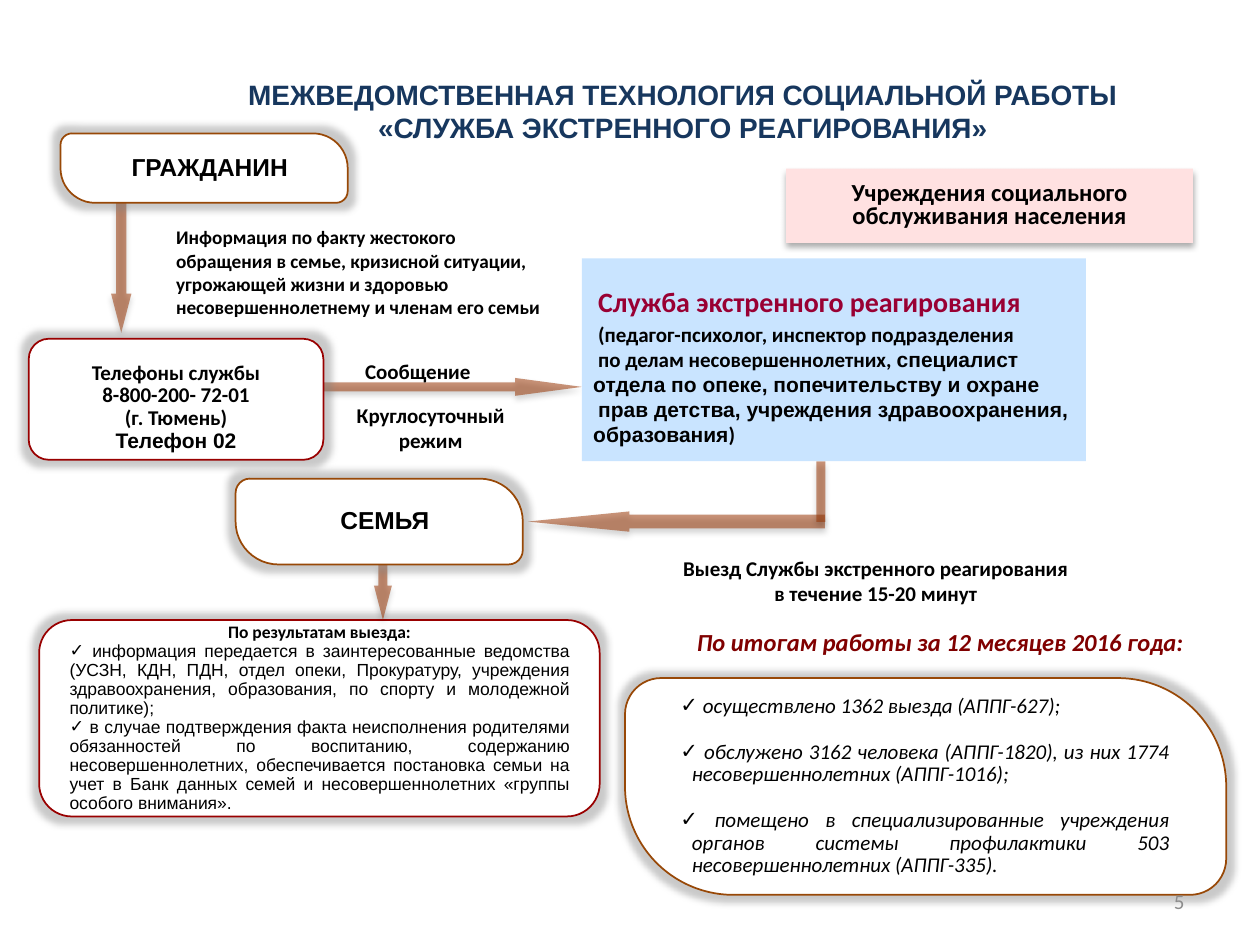
from dataclasses import dataclass
from typing import Optional

from lxml import etree
from pptx import Presentation
from pptx import util as u
from pptx.dml import color
from pptx.enum import shapes, text
from pptx.oxml import ns

GEO = shapes.MSO_SHAPE
ALIGN = text.PP_ALIGN
ANCHOR = text.MSO_ANCHOR
LEFT, CENTER, RIGHT, JUSTIFY = ALIGN.LEFT, ALIGN.CENTER, ALIGN.RIGHT, ALIGN.JUSTIFY
BROWN, DARK_RED, ARROW = "984807", "990000", "993300"
SIDE, EDGE = 0.25, 0.13


@dataclass
class Run:
    text: str
    size: float = 12
    font: str = "Calibri"
    color: str = "000000"
    bold: bool = True
    italic: bool = False


@dataclass
class Para:
    runs: list[Run]
    align: ALIGN = CENTER
    line: float = 1
    before: float = 0
    margin: float = 0
    hang: float = 0
    bullet: bool = False


@dataclass
class Box:
    at: tuple[float, float, float, float]
    paras: list[Para]
    anchor: ANCHOR = ANCHOR.MIDDLE
    insets: tuple[float, float, float, float] = (SIDE, EDGE, SIDE, EDGE)
    geometry: Optional[GEO] = None
    fill: Optional[str] = None
    outline: Optional[str] = None
    shadow: bool = False


@dataclass
class Arrow:
    at: tuple[float, float, float, float]
    geometry: GEO
    adjustments: tuple[float, ...] = ()


def rgb(value: str) -> color.RGBColor:
    return color.RGBColor.from_string(value)


def add_xml(parent, tag: str, **attrs):
    return etree.SubElement(parent, ns.qn(tag), **attrs)


def place(s, at) -> None:
    s.left, s.top, s.width, s.height = (u.Cm(v) for v in at)


def add_effect(s, tag: str, hex_color: str, alpha: int, **attrs) -> None:
    s.shadow.inherit = False
    effects = s._element.spPr.find(ns.qn("a:effectLst"))
    tone = add_xml(add_xml(effects, tag, **attrs), "a:srgbClr", val=hex_color)
    add_xml(tone, "a:alpha", val=str(alpha * 1000))


def add_shadow(s) -> None:
    add_effect(s, "a:outerShdw", "000000", 32, blurRad="44450", dist="27940",
               dir="5400000", rotWithShape="0")


def write(tf, paras: list[Para]) -> None:
    for i, para in enumerate(paras):
        p = tf.paragraphs[0] if i == 0 else tf.add_paragraph()
        pPr = p._p.get_or_add_pPr()
        pPr.set("marL", str(u.Cm(para.margin)))
        pPr.set("indent", str(-u.Cm(para.hang)))
        if para.bullet:
            add_xml(pPr, "a:buChar", char="✓")
        else:
            add_xml(pPr, "a:buNone")
        p.alignment = para.align
        p.line_spacing = para.line
        p.space_before = u.Pt(para.before)
        for run in para.runs:
            r = p.add_run()
            r.text = run.text
            r.font.size = u.Pt(run.size)
            r.font.name = run.font
            r.font.bold = run.bold
            r.font.italic = run.italic
            r.font.color.rgb = rgb(run.color)


def dress(s, box: Box) -> None:
    if box.fill:
        s.fill.solid()
        s.fill.fore_color.rgb = rgb(box.fill)
    if box.outline:
        s.line.color.rgb = rgb(box.outline)
        s.line.width = u.Pt(1)
        add_effect(s, "a:glow", "808080", 42, rad="101600")
    elif box.geometry:
        s.line.fill.background()
        s.shadow.inherit = False
    if box.shadow:
        add_shadow(s)
    tf = s.text_frame
    tf.word_wrap = True
    tf.auto_size = text.MSO_AUTO_SIZE.NONE
    tf.vertical_anchor = box.anchor
    tf.margin_left, tf.margin_top, tf.margin_right, tf.margin_bottom = (
        u.Cm(v) for v in box.insets)
    write(tf, box.paras)


def draw_box(slide, box: Box) -> None:
    at = [u.Cm(v) for v in box.at]
    if box.geometry is None:
        s = slide.shapes.add_textbox(*at)
    else:
        s = slide.shapes.add_shape(box.geometry, *at)
        if box.geometry == GEO.ROUND_2_DIAG_RECTANGLE:
            s.adjustments[0], s.adjustments[1] = 0.167, 0.5
    dress(s, box)


def fill_placeholder(s, box: Box, preset: str = "rect", **guides: int) -> None:
    place(s, box.at)
    geometry = add_xml(s._element.spPr, "a:prstGeom", prst=preset)
    values = add_xml(geometry, "a:avLst")
    for name, value in guides.items():
        add_xml(values, "a:gd", name=name, fmla=f"val {value}")
    dress(s, box)


def draw_arrow(slide, arrow: Arrow) -> None:
    s = slide.shapes.add_shape(arrow.geometry, *(u.Cm(v) for v in arrow.at))
    for i, value in enumerate(arrow.adjustments):
        s.adjustments[i] = value
    s.fill.solid()
    s.fill.fore_color.rgb = rgb(ARROW)
    tone = s._element.spPr.find(ns.qn("a:solidFill"))[0]
    add_xml(tone, "a:alpha", val="52000")
    s.line.fill.background()
    add_shadow(s)


def lines(*texts: str, size: float = 12, **layout) -> list[Para]:
    return [Para([Run(t, size)], **layout) for t in texts]


def person(at, label: str) -> Box:
    return Box(at, [Para([Run(label, 14, "Arial")], line=0.9, margin=0.23)],
               geometry=GEO.ROUND_2_DIAG_RECTANGLE, fill="FFFFFF", outline=BROWN)


def outcome(t: str) -> Para:
    return Para([Run(t, 10, "Arial", bold=False)], JUSTIFY, 0.9, bullet=True)


def total(t: str, before: float = 13) -> Para:
    return Para([Run(t, bold=False, italic=True)], JUSTIFY, 0.9, before, 0.46, 0.23, True)


TITLE = Box((3.15, 1.42, 21.23, 1.63), [
    Para([Run(t, 16, "Arial", "17375E")])
    for t in ("МЕЖВЕДОМСТВЕННАЯ ТЕХНОЛОГИЯ СОЦИАЛЬНОЙ РАБОТЫ",
              "«СЛУЖБА ЭКСТРЕННОГО РЕАГИРОВАНИЯ»")])
OUTCOMES = Box((0.79, 12.5, 11.3, 3.96), [
    Para([Run("По результатам выезда:", 10)], line=0.9),
    outcome(" информация передается в заинтересованные ведомства (УСЗН, КДН, ПДН, отдел опеки, Прокуратуру, учреждения здравоохранения, образования, по спорту и молодежной политике);"),
    outcome(" в случае подтверждения факта неисполнения родителями обязанностей по воспитанию, содержанию несовершеннолетних, обеспечивается постановка семьи на учет в Банк данных семей и несовершеннолетних «группы особого внимания»."),
], insets=(0.42, 0, 0.42, 0), fill="FFFFFF", outline=DARK_RED)
TOTALS = Box((12.6, 13.67, 12.12, 4.37), [
    total(" осуществлено 1362 выезда (АППГ-627);", 0),
    total(" обслужено 3162 человека (АППГ-1820), из них 1774 несовершеннолетних (АППГ-1016);"),
    total(" помещено в специализированные учреждения органов системы профилактики 503 несовершеннолетних (АППГ-335)."),
], insets=(0.25, 0, 0.5, 0), fill="FFFFFF", outline=BROWN)

BOXES = [
    Box((11.73, 5.21, 10.16, 4.09), [
        Para([Run("Служба экстренного реагирования", 16, color="990033")], LEFT, margin=0.1),
        Para([Run("(педагог-психолог, инспектор подразделения")], LEFT, before=1.5, margin=0.1),
        Para([Run("по делам несовершеннолетних, "), Run("специалист", font="Arial")], LEFT, margin=0.1),
        Para([Run("отдела по опеке, попечительству и охране", font="Arial")], LEFT),
        Para([Run("прав детства, учреждения здравоохранения,", font="Arial")], LEFT, margin=0.1),
        Para([Run("образования", font="Arial"), Run(")")], LEFT),
    ], insets=(0.23, 0.25, 0, 0), geometry=GEO.RECTANGLE, fill="C9E4FF"),
    Box((7.11, 7.09, 3.45, 0.76), lines("Сообщение", align=LEFT), ANCHOR.TOP),
    Box((6.5, 7.98, 4.37, 1.27), lines("Круглосуточный", "режим"), ANCHOR.TOP),
    Box((12.7, 10.72, 9.91, 1.98),
        lines("Выезд Службы экстренного реагирования", "в течение 15-20 минут")),
    Box((3.3, 4.42, 8, 2.62), lines(
        "Информация по факту жестокого обращения в семье, кризисной ситуации, угрожающей жизни и здоровью несовершеннолетнему и членам его семьи",
        size=11, align=LEFT), ANCHOR.TOP),
    Box((15.85, 3.4, 8.2, 1.5),
        lines("Учреждения социального", "обслуживания населения", size=14, line=0.8),
        geometry=GEO.RECTANGLE, fill="FFE1E1", shadow=True),
    person((1.22, 2.69, 5.79, 1.4), "ГРАЖДАНИН"),
    person((4.75, 9.65, 5.79, 1.73), "СЕМЬЯ"),
    Box((0.58, 6.83, 5.94, 2.44),
        lines("Телефоны службы", "8-800-200- 72-01", "(г. Тюмень)", line=0.9)
        + [Para([Run("Телефон 02", font="Arial")], line=0.9)],
        insets=(SIDE, 0.33, SIDE, 0), geometry=GEO.ROUNDED_RECTANGLE,
        fill="FFFFFF", outline=DARK_RED),
    Box((12.9, 12.5, 12.12, 0.86), [
        Para([Run("По итогам работы за 12 месяцев 2016 года:", 14, color="800000", italic=True)])]),
    Box((18.21, 17.65, 5.92, 1.02), [Para([Run("5", color="8C8C8C", bold=False)], RIGHT)]),
]
ARROWS = [
    Arrow((6.5, 7.62, 5.23, 0.36), GEO.RIGHT_ARROW, (0.5, 3.73)),
    Arrow((10.64, 10.31, 5.99, 0.41), GEO.LEFT_ARROW, (0.67, 5)),
    Arrow((2.24, 3.81, 0.41, 2.9), GEO.DOWN_ARROW, (0.5, 1.92)),
    Arrow((16.46, 9.3, 0.18, 1.22), GEO.RECTANGLE),
    Arrow((7.54, 11.38, 0.36, 1.12), GEO.DOWN_ARROW, (0.5, 1.92)),
]


def main() -> None:
    prs = Presentation()
    prs.slide_width, prs.slide_height = u.Cm(25.4), u.Cm(19.05)
    slide = prs.slides.add_slide(prs.slide_layouts[3])
    title, outcomes, totals = list(slide.placeholders)[:3]
    fill_placeholder(title, TITLE)
    fill_placeholder(outcomes, OUTCOMES, "roundRect")
    fill_placeholder(totals, TOTALS, "round2DiagRect", adj1=16700, adj2=50000)
    for arrow in ARROWS:
        draw_arrow(slide, arrow)
    for box in BOXES:
        draw_box(slide, box)
    prs.save("out.pptx")


if __name__ == "__main__":
    main()
